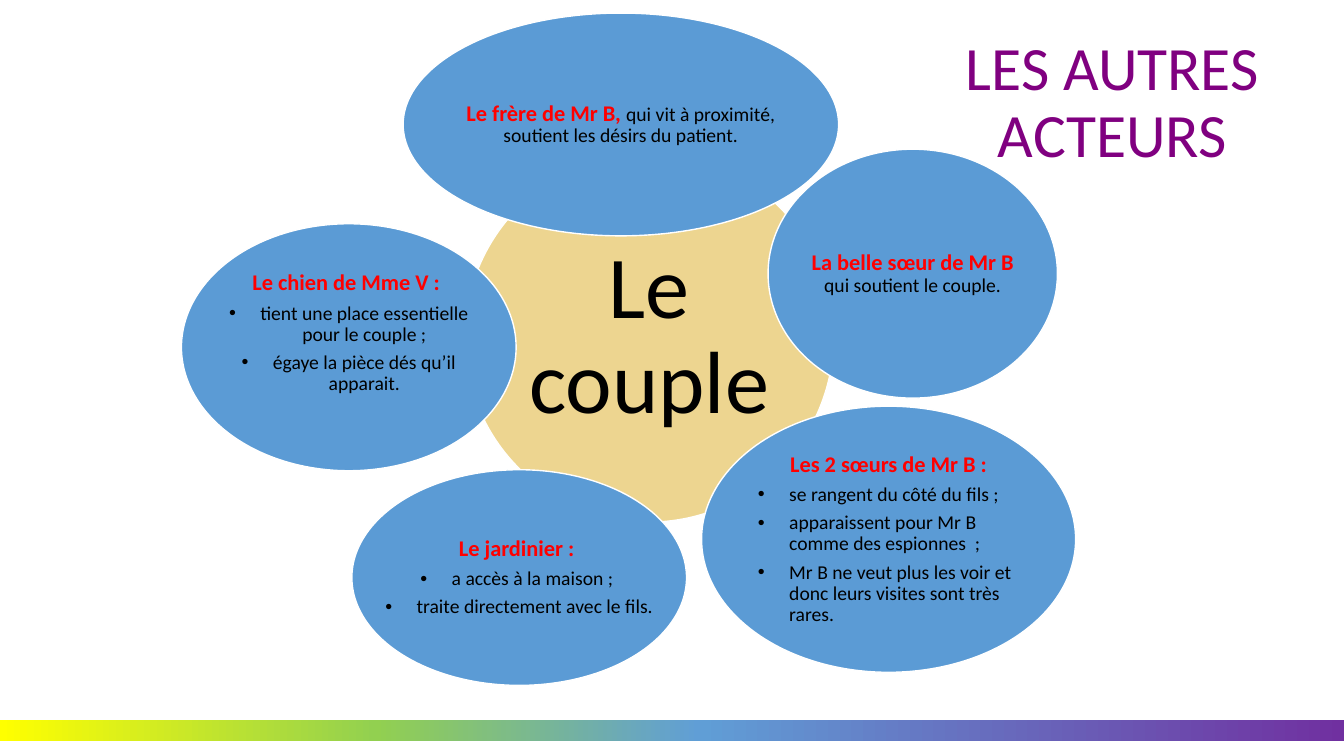
from dataclasses import dataclass

from lxml import etree
from pptx import Presentation
from pptx import util as u
from pptx.dml import color
from pptx.enum import shapes, text
from pptx.oxml import ns

COLOURS = {
    "purple": "800080", "sand": "DDAC23", "blue": "5B9BD5",
    "white": "FFFFFF", "black": "000000", "red": "FF0000",
}
RAINBOW = ((0, "FFFF00"), (28, "92D050"), (52, "609ED6"), (100, "7030A0"))
FONT = "Calibri"
WIDTH, HEIGHT = u.Inches(13.33), u.Inches(7.5)
ELLIPSE_TEXT_INSET = (1 - 0.5 ** 0.5) / 2
BULLET_INDENT = u.Inches(0.31)

TITLE = {"size": u.Pt(44), "bold": False, "colour": "purple"}
CENTRE = {"size": u.Pt(63), "bold": False, "colour": "black"}
HEADING = {"size": u.Pt(16), "bold": True, "colour": "red"}
BODY = {"size": u.Pt(14), "bold": False, "colour": "black"}


@dataclass(frozen=True)
class Box:
    """Shares of the slide's size, in percent."""
    left: float
    top: float
    width: float
    height: float

    def lengths(self) -> dict:
        return {
            "left": across(self.left), "top": down(self.top),
            "width": across(self.width), "height": down(self.height),
        }


@dataclass(frozen=True)
class Actor:
    box: Box
    inset_x: float
    inset_y: float
    heading: str
    sentence: str = ""
    bullets: tuple = ()
    bullet_alignment: text.PP_ALIGN = text.PP_ALIGN.CENTER
    extra_bottom: float = 0


ACTORS = (
    Actor(Box(30, 1.73, 32.4, 29.47), 4.28, 3.73, "Le frère de Mr B, ",
          "qui vit à proximité, soutient les désirs du patient."),
    Actor(Box(57.15, 19.73, 21.53, 32.93), 2.55, 5.87,
          "La belle sœur de Mr B ", "qui soutient le couple."),
    Actor(Box(52.2, 53.73, 27.83, 35.2), 4.2, 5.47, "Les 2 sœurs de Mr B :",
          bullets=("se rangent du côté du fils ;",
                   "apparaissent pour Mr B comme des espionnes  ;",
                   "Mr B ne veut plus les voir et donc leurs visites sont très rares."),
          bullet_alignment=text.PP_ALIGN.LEFT),
    Actor(Box(26.18, 62.13, 24.9, 28.53), 2.48, 5.2, "Le jardinier : ",
          bullets=("a accès à la maison ; ", "traite directement avec le fils.")),
    Actor(Box(13.5, 29.6, 24.9, 32.67), 2.48, 5.2, "Le chien de Mme V : ",
          bullets=("tient une place essentielle pour le couple ;",
                   "égaye la pièce dés qu’il apparait."),
          extra_bottom=3.73),
)


def across(share: float) -> int:
    return round(WIDTH * share / 100)


def down(share: float) -> int:
    return round(HEIGHT * share / 100)


def apply(target, values: dict) -> None:
    for name, value in values.items():
        setattr(target, name, value)


def rgb(name: str) -> color.RGBColor:
    return color.RGBColor.from_string(COLOURS[name])


def add_run(paragraph, words: str, style: dict) -> None:
    run = paragraph.add_run()
    run.text = words
    apply(run.font, {"name": FONT, "size": style["size"], "bold": style["bold"]})
    run.font.color.rgb = rgb(style["colour"])


def format_paragraph(paragraph, alignment=text.PP_ALIGN.CENTER, space_after=0) -> None:
    apply(paragraph, {"alignment": alignment, "line_spacing": 0.9,
                      "space_before": u.Pt(0), "space_after": u.Pt(space_after)})


def add_bullet(paragraph) -> None:
    properties = paragraph._p.get_or_add_pPr()
    properties.set("marL", str(BULLET_INDENT))
    properties.set("indent", str(-BULLET_INDENT))
    font = etree.SubElement(properties, ns.qn("a:buFont"))
    font.set("typeface", "Arial")
    etree.SubElement(properties, ns.qn("a:buChar")).set("char", "•")


def add_ellipse(slide, box: Box, fill: str, inset_x: float, inset_y: float,
                extra_bottom: float = 0):
    shape = slide.shapes.add_shape(shapes.MSO_SHAPE.OVAL, **box.lengths())
    shape.shadow.inherit = False
    shape.fill.solid()
    shape.fill.fore_color.rgb = rgb(fill)
    shape.line.color.rgb = rgb("white")
    shape.line.width = u.Pt(1)
    side = across(inset_x - box.width * ELLIPSE_TEXT_INSET)
    top = down(inset_y - box.height * ELLIPSE_TEXT_INSET)
    apply(shape.text_frame, {
        "word_wrap": True, "vertical_anchor": text.MSO_ANCHOR.MIDDLE,
        "margin_left": side, "margin_right": side,
        "margin_top": top, "margin_bottom": top + down(extra_bottom),
    })
    return shape


def add_rainbow_bar(slide) -> None:
    bar = slide.shapes.add_shape(shapes.MSO_SHAPE.RECTANGLE,
                                 **Box(0, 95.2, 100, 2.8).lengths())
    bar.shadow.inherit = False
    bar.line.fill.background()
    bar.fill.gradient()
    bar.fill.gradient_angle = 0
    stops = bar._element.spPr.find(ns.qn("a:gradFill")).find(ns.qn("a:gsLst"))
    for stop in list(stops):
        stops.remove(stop)
    for position, colour in RAINBOW:
        stop = etree.SubElement(stops, ns.qn("a:gs"))
        stop.set("pos", str(position * 1000))
        etree.SubElement(stop, ns.qn("a:srgbClr")).set("val", colour)


def add_title(slide) -> None:
    title = slide.shapes.title
    apply(title, Box(67.88, 4.13, 29.78, 19.33).lengths())
    apply(title.text_frame, {"word_wrap": True, "auto_size": text.MSO_AUTO_SIZE.NONE,
                             "vertical_anchor": text.MSO_ANCHOR.MIDDLE})
    paragraph = title.text_frame.paragraphs[0]
    format_paragraph(paragraph)
    add_run(paragraph, "LES AUTRES ACTEURS", TITLE)


def add_couple(slide) -> None:
    circle = add_ellipse(slide, Box(34.58, 20.27, 27.45, 48.8), "sand", 4.65, 8.27)
    solid = circle._element.spPr.find(ns.qn("a:solidFill"))
    etree.SubElement(solid[0], ns.qn("a:alpha")).set("val", "50000")
    paragraph = circle.text_frame.paragraphs[0]
    format_paragraph(paragraph)
    add_run(paragraph, "Le couple ", CENTRE)


def add_actor(slide, actor: Actor) -> None:
    ellipse = add_ellipse(slide, actor.box, "blue", actor.inset_x, actor.inset_y,
                          actor.extra_bottom)
    frame = ellipse.text_frame
    heading = frame.paragraphs[0]
    format_paragraph(heading, space_after=5.5 if actor.bullets else 0)
    add_run(heading, actor.heading, HEADING)
    if actor.sentence:
        add_run(heading, actor.sentence, BODY)
    for words in actor.bullets:
        paragraph = frame.add_paragraph()
        format_paragraph(paragraph, actor.bullet_alignment, 5)
        add_bullet(paragraph)
        add_run(paragraph, words, BODY)


def main() -> None:
    presentation = Presentation()
    apply(presentation, {"slide_width": WIDTH, "slide_height": HEIGHT})
    slide = presentation.slides.add_slide(presentation.slide_layouts[5])
    add_rainbow_bar(slide)
    add_title(slide)
    add_couple(slide)
    for actor in ACTORS:
        add_actor(slide, actor)
    presentation.save("out.pptx")


if __name__ == "__main__":
    main()
